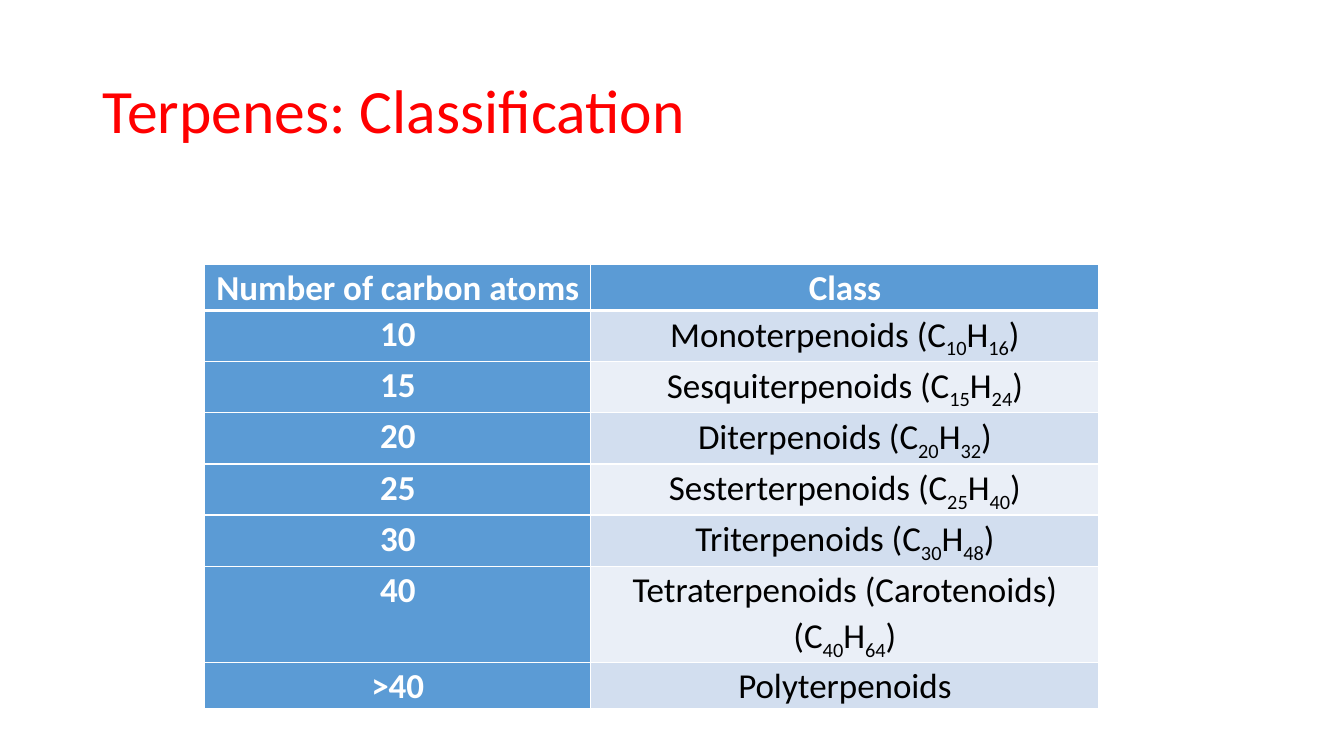
from dataclasses import dataclass

import lxml.etree
import pptx
import pptx.dml.color
import pptx.enum.text
import pptx.oxml.ns
import pptx.table
import pptx.text.text
import pptx.util

Inches = pptx.util.Inches
Color = pptx.dml.color.RGBColor.from_string


@dataclass(frozen=True)
class Theme:
    font: str = "Calibri"
    title_size: int = 44
    table_size: int = 25
    title: str = "FF0000"
    accent: str = "5B9BD5"
    light: str = "FFFFFF"
    dark: str = "000000"
    bands: tuple[str, str] = ("D2DEEF", "EAEFF7")
    border: float = 1
    header_border: float = 3


@dataclass(frozen=True)
class Terpene:
    carbons: str
    name: str
    hydrogens: str = ""  # empty when the class has no single formula
    row_span: float = 1  # height in grid rows

    def pieces(self) -> list[str]:
        """Text pieces in which every second one is a subscript."""
        if not self.hydrogens:
            return [self.name]
        return [f"{self.name} (C", self.carbons, "H", self.hydrogens, ")"]


THEME = Theme()
SLIDE_WIDTH, SLIDE_HEIGHT = 13.33, 7.5
TABLE_LEFT, TABLE_TOP = 2.03, 2.62
COLUMNS = (3.83, 5.04)
ROW = 0.46
HEADERS = ("Number of carbon atoms", "Class")
TERPENES = (
    Terpene("10", "Monoterpenoids", "16"),
    Terpene("15", "Sesquiterpenoids", "24"),
    Terpene("20", "Diterpenoids", "32"),
    Terpene("25", "Sesterterpenoids", "40"),
    Terpene("30", "Triterpenoids", "48"),
    Terpene("40", "Tetraterpenoids (Carotenoids)", "64", 2.04),
    Terpene(">40", "Polyterpenoids"),
)


def style_paragraph(paragraph: pptx.text.text._Paragraph, size: int, color: str,
                    spacing: float, bold: bool = False) -> None:
    paragraph.line_spacing = spacing
    font = paragraph.font
    font.name, font.size, font.bold = THEME.font, pptx.util.Pt(size), bold
    font.color.rgb = Color(color)


def set_borders(cell: pptx.table._Cell, widths: dict[str, float]) -> None:
    """Draw the cell's sides; lines must come before the fill in the XML."""
    properties = cell._tc.get_or_add_tcPr()
    qn = pptx.oxml.ns.qn
    for position, (side, width) in enumerate(widths.items()):
        line = lxml.etree.Element(qn(f"a:{side}"), w=str(pptx.util.Pt(width)))
        fill = lxml.etree.SubElement(line, qn("a:solidFill"))
        lxml.etree.SubElement(fill, qn("a:srgbClr"), val=THEME.light)
        properties.insert(position, line)


def fill_cell(cell: pptx.table._Cell, pieces: list[str], fill: str, color: str,
              bold: bool, top: float, bottom: float) -> None:
    cell.margin_left = cell.margin_right = Inches(0.07)
    cell.margin_top = cell.margin_bottom = 0
    cell.fill.solid()
    cell.fill.fore_color.rgb = Color(fill)
    set_borders(cell, {"lnL": THEME.border, "lnR": THEME.border, "lnT": top, "lnB": bottom})
    paragraph = cell.text_frame.paragraphs[0]
    paragraph.alignment = pptx.enum.text.PP_ALIGN.CENTER
    style_paragraph(paragraph, THEME.table_size, color, 1.07, bold)
    for index, piece in enumerate(pieces):
        run = paragraph.add_run()
        run.text = piece
        if index % 2:
            run._r.get_or_add_rPr().set("baseline", "-25000")


def add_title(slide: pptx.slide.Slide, text: str) -> None:
    box = slide.shapes.add_textbox(Inches(0.92), Inches(0.4), Inches(11.5), Inches(1.45))
    frame = box.text_frame
    frame.word_wrap = True
    frame.vertical_anchor = pptx.enum.text.MSO_ANCHOR.MIDDLE
    frame.text = text
    style_paragraph(frame.paragraphs[0], THEME.title_size, THEME.title, 0.9)


def add_terpene_table(slide: pptx.slide.Slide) -> None:
    spans = [1, *(terpene.row_span for terpene in TERPENES)]
    table = slide.shapes.add_table(
        len(spans), len(COLUMNS), Inches(TABLE_LEFT), Inches(TABLE_TOP),
        Inches(sum(COLUMNS)), Inches(sum(spans) * ROW)).table
    table.first_col = True
    for column, width in zip(table.columns, COLUMNS):
        column.width = Inches(width)
    for row, span in zip(table.rows, spans):
        row.height = Inches(span * ROW)

    # Header row
    for column, header in enumerate(HEADERS):
        fill_cell(table.cell(0, column), [header], THEME.accent, THEME.light, True,
                  THEME.border, THEME.header_border)

    # One row per class, with alternating bands
    for row, terpene in enumerate(TERPENES, start=1):
        top = THEME.header_border if row == 1 else THEME.border
        fill_cell(table.cell(row, 0), [terpene.carbons], THEME.accent, THEME.light, True,
                  top, THEME.border)
        fill_cell(table.cell(row, 1), terpene.pieces(), THEME.bands[(row - 1) % 2],
                  THEME.dark, False, top, THEME.border)


def main() -> None:
    presentation = pptx.Presentation()
    presentation.slide_width = Inches(SLIDE_WIDTH)
    presentation.slide_height = Inches(SLIDE_HEIGHT)
    slide = presentation.slides.add_slide(presentation.slide_layouts[6])
    add_title(slide, "Terpenes: Classification")
    add_terpene_table(slide)
    presentation.save("out.pptx")


if __name__ == "__main__":
    main()
